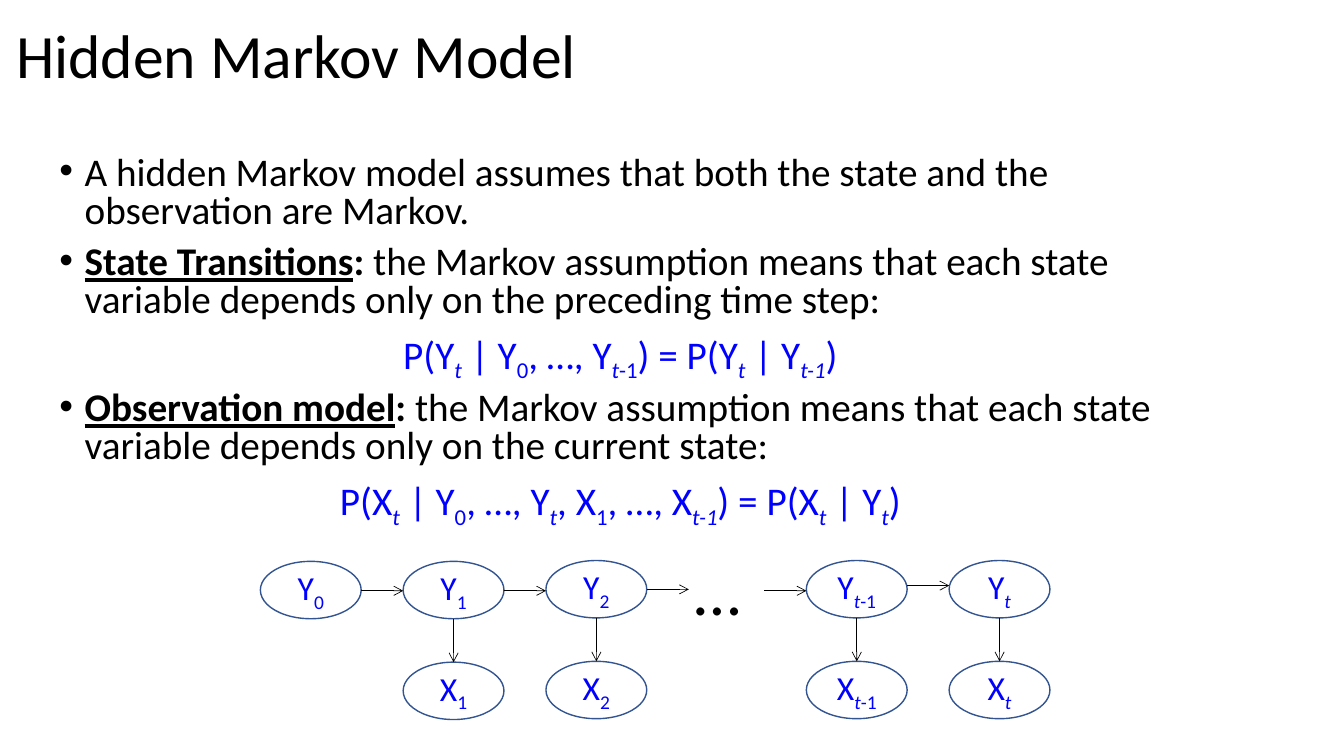
from lxml.etree import SubElement
from pptx import Presentation
from pptx.dml.color import RGBColor
from pptx.enum.shapes import MSO_CONNECTOR as Connector, MSO_SHAPE as Preset
from pptx.enum.text import MSO_ANCHOR as Anchor, MSO_AUTO_SIZE as AutoSize, PP_ALIGN as Align
from pptx.oxml.ns import qn
from pptx.util import Pt

BLACK, BLUE, OUTLINE = "000000", "0000FF", "325491"
OVAL_WIDTH, OVAL_HEIGHT, ROW_GAP = 72, 41, 72


def colour(code):
    return RGBColor.from_string(code)


class MarkovPage:
    font = "Calibri"

    def __init__(self, deck):
        self.page = deck.slides.add_slide(deck.slide_layouts[1])
        self.shapes = self.page.shapes

    def place(self, shape, left, top, width, height):
        shape.left, shape.top = Pt(left), Pt(top)
        shape.width, shape.height = Pt(width), Pt(height)

    def span(self, para, text, size, code, bold=False, underline=False, italic=False, lowered=False):
        span = para.add_run()
        span.text = text
        font = span.font
        font.name, font.size, font.bold = self.font, Pt(size), bold
        font.underline, font.italic = underline, italic
        font.color.rgb = colour(code)
        if lowered:
            span._r.get_or_add_rPr().set("baseline", "-25000")

    def formula(self, para, text, size):
        """Underscores enclose subscripts, asterisks enclose italics."""
        for level, part in enumerate(text.split("_")):
            for slant, piece in enumerate(part.split("*")):
                if piece:
                    self.span(para, piece, size, BLUE, italic=slant % 2 == 1, lowered=level % 2 == 1)
        para.alignment = Align.CENTER

    def title(self, text, left, top, width, height):
        box = self.shapes.title
        self.place(box, left, top, width, height)
        frame = box.text_frame
        frame.vertical_anchor, frame.auto_size = Anchor.MIDDLE, AutoSize.NONE
        para = frame.paragraphs[0]
        para.alignment, para.line_spacing = Align.LEFT, 0.9
        self.span(para, text, 44, BLACK)

    def body(self, items, left, top, width, height):
        box = self.page.placeholders[1]
        self.place(box, left, top, width, height)
        frame = box.text_frame
        frame.auto_size = AutoSize.NONE
        for index, (lead, text) in enumerate(items):
            para = frame.add_paragraph() if index else frame.paragraphs[0]
            para.line_spacing, para.space_before = 0.8, Pt(10)
            if lead is None:
                self.bullet(para, False)
                self.formula(para, text, 28)
                continue
            self.bullet(para, True)
            if lead:
                self.span(para, lead, 28, BLACK, bold=True, underline=True)
                self.span(para, ": ", 28, BLACK, bold=True)
            self.span(para, text, 28, BLACK)

    def bullet(self, para, shown):
        properties = para._p.get_or_add_pPr()
        properties.set("marL", str(Pt(18 if shown else 0)))
        properties.set("indent", str(Pt(-18 if shown else 0)))
        if shown:
            SubElement(properties, qn("a:buFont"), typeface="Arial")
            SubElement(properties, qn("a:buChar"), char="•")
        else:
            SubElement(properties, qn("a:buNone"))

    def oval(self, text, left, top):
        oval = self.shapes.add_shape(Preset.OVAL, Pt(left), Pt(top), Pt(OVAL_WIDTH), Pt(OVAL_HEIGHT))
        oval.shadow.inherit = False
        oval.fill.background()
        oval.line.color.rgb, oval.line.width = colour(OUTLINE), Pt(1)
        frame = oval.text_frame
        frame.vertical_anchor, frame.word_wrap = Anchor.MIDDLE, False
        self.formula(frame.paragraphs[0], text, 24)

    def arrow(self, *ends):
        arrow = self.shapes.add_connector(Connector.STRAIGHT, *map(Pt, ends))
        arrow.line.color.rgb, arrow.line.width = colour(BLACK), Pt(0.5)
        SubElement(arrow.line._get_or_add_ln(), qn("a:tailEnd"), type="arrow")
        SubElement(arrow._element.spPr, qn("a:effectLst"))

    def label(self, text, left, top, width, height):
        box = self.shapes.add_textbox(Pt(left), Pt(top), Pt(width), Pt(height))
        box.text_frame.word_wrap = False
        box.text_frame.auto_size = AutoSize.SHAPE_TO_FIT_TEXT
        self.span(box.text_frame.paragraphs[0], text, 48, BLACK)


def main():
    deck = Presentation()
    deck.slide_width, deck.slide_height = Pt(960), Pt(540)
    markov = MarkovPage(deck)
    markov.title("Hidden Markov Model", 4.3, 0, 648, 84)
    markov.body([
        ("", "A hidden Markov model assumes that both the state and the observation are Markov."),
        ("State Transitions",
         "the Markov assumption means that each state variable depends only on the preceding time step:"),
        (None, "P(Y_*t*_ | Y_0_, …, Y_*t*-1_) = P(Y_*t*_ | Y_*t-1*_) "),
        ("Observation model",
         "the Markov assumption means that each state variable depends only on the current state:"),
        (None, "P(X_*t*_ | Y_0_, …, Y_*t*_, X_1_, …, X_*t-1*_) = P(X_*t*_ | Y_*t*_) "),
    ], 35.3, 108, 822, 285)

    columns = [("0", 186, 401), ("1", 288, 401), ("2", 390, 400.4),
               ("*t*-1", 576, 400.4), ("*t*", 678, 400.4)]
    for step, left, top in columns:
        markov.oval(f"Y_{step}_", left, top)
        if step != "0":
            markov.oval(f"X_{step}_", left, top + ROW_GAP)
            middle = left + OVAL_WIDTH / 2
            markov.arrow(middle, top + OVAL_HEIGHT, middle, top + ROW_GAP)

    for start, height in [(258, 422), (360, 422), (462, 421), (546, 422), (648, 418.3)]:
        markov.arrow(start, height, start + 30, height)
    markov.label("…", 489, 388, 48, 65.5)
    deck.save("out.pptx")


if __name__ == "__main__":
    main()
